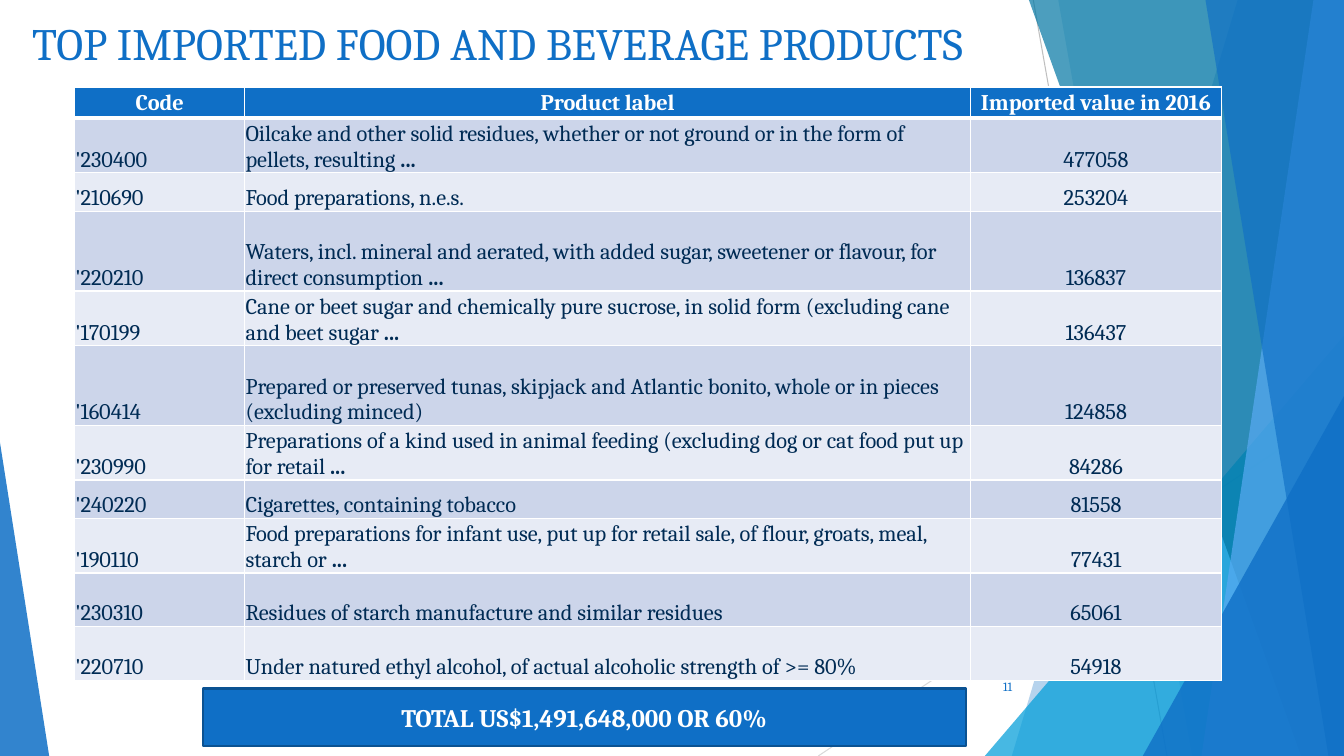
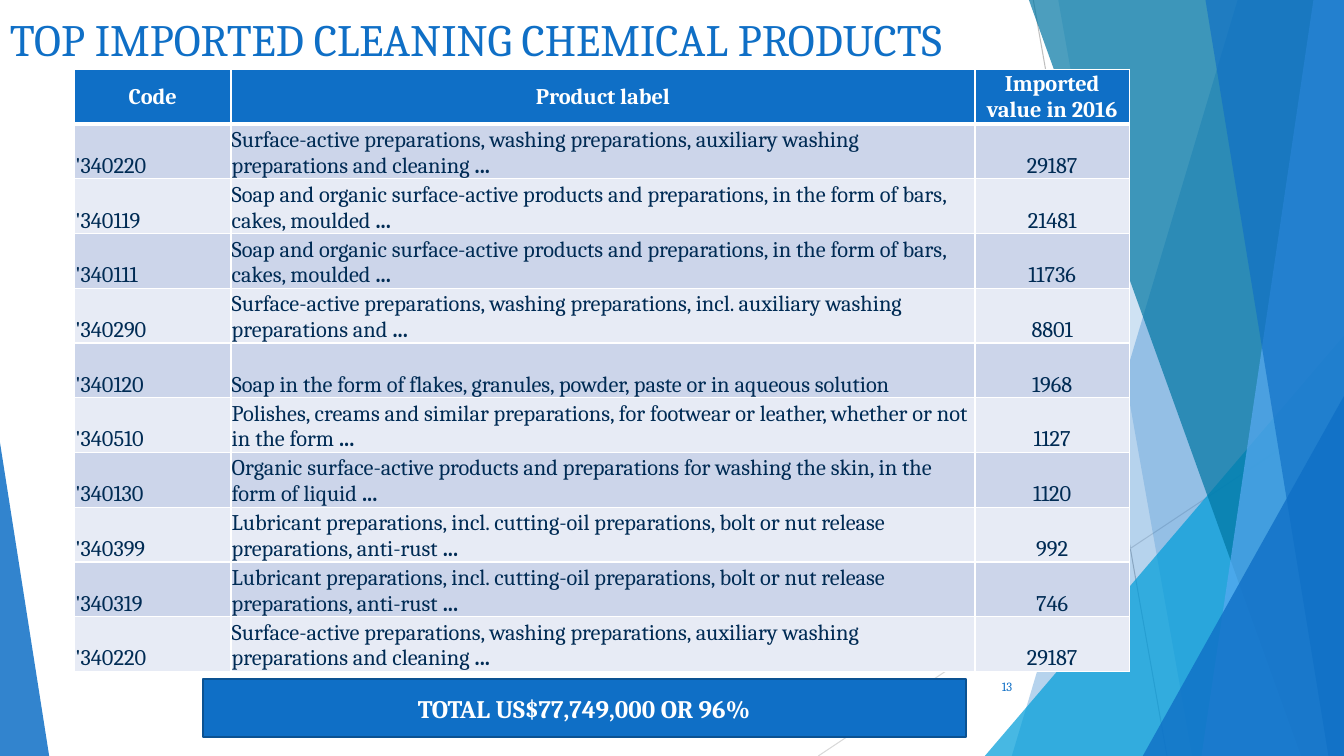
import lxml.etree
import pptx
import pptx.dml.color
import pptx.enum.shapes
import pptx.enum.text
import pptx.oxml.ns
import pptx.util

Cm = pptx.util.Cm
Pt = pptx.util.Pt
RGBColor = pptx.dml.color.RGBColor
ALIGN = pptx.enum.text.PP_ALIGN
ANCHOR = pptx.enum.text.MSO_ANCHOR
SHAPE = pptx.enum.shapes.MSO_SHAPE
qn = pptx.oxml.ns.qn

# Colours
WHITE = RGBColor(0xFF, 0xFF, 0xFF)
BLUE = RGBColor(0x0F, 0x6F, 0xC6)
DARK_BLUE = RGBColor(0x0B, 0x52, 0x92)
NAVY = RGBColor(0x00, 0x2B, 0x54)
CYAN = RGBColor(0x00, 0x9D, 0xD9)
TEAL = RGBColor(0x00, 0x76, 0xA3)
SKY = RGBColor(0x59, 0xAA, 0xF2)
GREY = RGBColor(0xBF, 0xBF, 0xBF)
LIGHT_GREY = RGBColor(0xD9, 0xD9, 0xD9)
ROW_FILLS = (RGBColor(0xCC, 0xD5, 0xEA), RGBColor(0xE7, 0xEB, 0xF5))

# Text formats
FONT = "Cambria"
TITLE = {"name": FONT, "size": Pt(32), "bold": False}
HEADER = {"name": FONT, "size": Pt(16), "bold": True}
BODY = {**HEADER, "bold": False}
TOTAL = {"name": FONT, "size": Pt(18), "bold": True}
NUMBER = {"name": FONT, "size": Pt(9), "bold": False}
CELL_FORMAT = {"margin_left": Cm(0.02), "margin_right": Cm(0.02),
               "margin_top": Cm(0.02), "margin_bottom": 0}

# Page and background geometry, in centimetres
WIDTH, HEIGHT = 33.87, 19.05
LINES = (((26.04, 0), (29.41, HEIGHT), GREY),
         ((WIDTH, 10.24), (20.62, HEIGHT), LIGHT_GREY))
# Bands reach the right edge: x at the top, x at the bottom, colour, opacity
BACK_BANDS = ((31.19, 25.5, BLUE, 30), (26.67, 30.05, BLUE, 20))
FRONT_BANDS = ((25.93, 32.79, TEAL, 70), (33.1, 30.28, SKY, 70),
               (30.38, 33.48, BLUE, 65))
# Triangles stand on the bottom edge: left, right, top, apex, colour, opacity
BACK_TRIANGLE = (24.82, WIDTH, 8.46, 1, CYAN, 72)
FRONT_TRIANGLES = ((28.8, WIDTH, 9.98, 1, BLUE, 80),
                   (0, 1.24, 11.15, 0, BLUE, 85))

# Table content
HEADINGS = ("Code", "Product label", "Imported value in 2016")
FOOD_ROWS = (
    ("'230400", "Oilcake and other solid residues, whether or not ground or in "
                "the form of pellets, resulting ...", "477058"),
    ("'210690", "Food preparations, n.e.s.", "253204"),
    ("'220210", "Waters, incl. mineral and aerated, with added sugar, sweetener "
                "or flavour, for direct consumption ...", "136837"),
    ("'170199", "Cane or beet sugar and chemically pure sucrose, in solid form "
                "(excluding cane and beet sugar ...", "136437"),
    ("'160414", "Prepared or preserved tunas, skipjack and Atlantic bonito, "
                "whole or in pieces (excluding minced)", "124858"),
    ("'230990", "Preparations of a kind used in animal feeding (excluding dog or "
                "cat food put up for retail ...", "84286"),
    ("'240220", "Cigarettes, containing tobacco", "81558"),
    ("'190110", "Food preparations for infant use, put up for retail sale, of "
                "flour, groats, meal, starch or ...", "77431"),
    ("'230310", "Residues of starch manufacture and similar residues", "65061"),
    ("'220710", "Under natured ethyl alcohol, of actual alcoholic strength of "
                ">= 80%", "54918"),
)
WASHING = ("Surface-active preparations, washing preparations, auxiliary washing "
           "preparations and cleaning ...")
SOAP = ("Soap and organic surface-active products and preparations, in the form "
        "of bars, cakes, moulded ...")
LUBRICANT = ("Lubricant preparations, incl. cutting-oil preparations, bolt or nut "
             "release preparations, anti-rust ...")
CLEANING_ROWS = (
    ("'340220", WASHING, "29187"),
    ("'340119", SOAP, "21481"),
    ("'340111", SOAP, "11736"),
    ("'340290", "Surface-active preparations, washing preparations, incl. "
                "auxiliary washing preparations and ...", "8801"),
    ("'340120", "Soap in the form of flakes, granules, powder, paste or in "
                "aqueous solution", "1968"),
    ("'340510", "Polishes, creams and similar preparations, for footwear or "
                "leather, whether or not in the form ...", "1127"),
    ("'340130", "Organic surface-active products and preparations for washing "
                "the skin, in the form of liquid ...", "1120"),
    ("'340399", LUBRICANT, "992"),
    ("'340319", LUBRICANT, "746"),
    ("'340220", WASHING, "29187"),
)
SHORT, NORMAL, TALL = 0.97, 1.35, 2.01
FOOD_HEIGHTS = (0.79, NORMAL, SHORT, TALL, NORMAL, TALL, NORMAL, SHORT,
                NORMAL, NORMAL, NORMAL)
CLEANING_HEIGHTS = (1.38,) * 11


class Deck:
    """Holds the style and the slide being built."""

    def __init__(self):
        self.presentation = pptx.Presentation()
        self.presentation.slide_width = Cm(WIDTH)
        self.presentation.slide_height = Cm(HEIGHT)
        self.slide = None

    def new_slide(self):
        layout = self.presentation.slide_layouts[6]
        self.slide = self.presentation.slides.add_slide(layout)
        self.background()

    # Background
    def background(self):
        for start, end, color in LINES:
            self.line(start, end, color)
        for band in BACK_BANDS:
            self.band(*band)
        self.triangle(*BACK_TRIANGLE)
        for band in FRONT_BANDS:
            self.band(*band)
        for triangle in FRONT_TRIANGLES:
            self.triangle(*triangle)

    def line(self, start, end, color):
        ends = [Cm(value) for value in start + end]
        connector = self.slide.shapes.add_connector(
            pptx.enum.shapes.MSO_CONNECTOR.STRAIGHT, *ends)
        connector.line.color.rgb = color
        connector.line.width = Pt(0.75)
        lxml.etree.SubElement(connector.element.spPr, qn("a:effectLst"))

    def band(self, top_x, bottom_x, color, opacity):
        builder = self.slide.shapes.build_freeform(Cm(top_x), 0)
        corners = ((WIDTH, 0), (WIDTH, HEIGHT), (bottom_x, HEIGHT))
        builder.add_line_segments([(Cm(x), Cm(y)) for x, y in corners])
        self.tint(builder.convert_to_shape(), color, opacity)

    def triangle(self, left, right, top, apex, color, opacity):
        shape = self.slide.shapes.add_shape(
            SHAPE.ISOSCELES_TRIANGLE, Cm(left), Cm(top),
            Cm(right - left), Cm(HEIGHT - top))
        shape.adjustments[0] = apex
        self.tint(shape, color, opacity)

    def tint(self, shape, color, opacity):
        shape.shadow.inherit = False
        shape.fill.solid()
        shape.fill.fore_color.rgb = color
        shape.line.fill.background()
        color_element = shape.element.spPr.find(".//" + qn("a:srgbClr"))
        alpha = lxml.etree.SubElement(color_element, qn("a:alpha"))
        alpha.set("val", str(opacity * 1000))

    # Text
    def add_text(self, paragraph, text, text_format, color, align=ALIGN.LEFT):
        paragraph.alignment = align
        run = paragraph.add_run()
        run.text = text
        for name, value in text_format.items():
            setattr(run.font, name, value)
        run.font.color.rgb = color

    def text_box(self, box, text, text_format, align, anchor):
        shape = self.slide.shapes.add_textbox(*[Cm(value) for value in box])
        frame = shape.text_frame
        frame.word_wrap = True
        frame.vertical_anchor = anchor
        self.add_text(frame.paragraphs[0], text, text_format, BLUE, align)

    def title(self, left, top, text):
        self.text_box((left, top, 32.66, 1.91), text, TITLE,
                      ALIGN.LEFT, ANCHOR.TOP)

    def page_number(self, number):
        self.text_box((23.85, 16.79, 1.91, 1.02), str(number), NUMBER,
                      ALIGN.RIGHT, ANCHOR.MIDDLE)

    def total(self, top, text):
        shape = self.slide.shapes.add_shape(
            SHAPE.RECTANGLE, Cm(5.11), Cm(top), Cm(19.23), Cm(1.45))
        shape.shadow.inherit = False
        shape.fill.solid()
        shape.fill.fore_color.rgb = BLUE
        shape.line.color.rgb = DARK_BLUE
        shape.line.width = Pt(1.5)
        shape.text_frame.vertical_anchor = ANCHOR.MIDDLE
        self.add_text(shape.text_frame.paragraphs[0], text, TOTAL, WHITE,
                      ALIGN.CENTER)

    # Table
    def table(self, top, widths, heights, rows):
        frame = self.slide.shapes.add_table(
            len(heights), len(widths), Cm(1.88), Cm(top),
            Cm(sum(widths)), Cm(sum(heights)))
        table = frame.table
        for column, width in zip(table.columns, widths):
            column.width = Cm(width)
        for row, height in zip(table.rows, heights):
            row.height = Cm(height)
        for row_index, texts in enumerate((HEADINGS,) + rows):
            for column_index, text in enumerate(texts):
                cell = table.cell(row_index, column_index)
                self.cell(cell, text, row_index, column_index)

    def cell(self, cell, text, row_index, column_index):
        is_header = row_index == 0
        for name, value in CELL_FORMAT.items():
            setattr(cell, name, value)
        cell.vertical_anchor = ANCHOR.MIDDLE if is_header else ANCHOR.BOTTOM
        self.borders(cell, top=3 if row_index == 1 else 1,
                     bottom=3 if is_header else 1)
        cell.fill.solid()
        cell.fill.fore_color.rgb = (
            BLUE if is_header else ROW_FILLS[(row_index - 1) % 2])
        paragraph = cell.text_frame.paragraphs[0]
        centred = is_header or column_index == 2
        align = ALIGN.CENTER if centred else ALIGN.LEFT
        if is_header:
            self.add_text(paragraph, text, HEADER, WHITE, align)
            return
        label, dots, _ = text.partition("...")
        self.add_text(paragraph, label, BODY, NAVY, align)
        if dots:
            self.add_text(paragraph, dots, HEADER, NAVY, align)

    def borders(self, cell, top, bottom):
        properties = cell._tc.get_or_add_tcPr()
        sides = {"a:lnL": 1, "a:lnR": 1, "a:lnT": top, "a:lnB": bottom}
        for tag, points in sides.items():
            border = lxml.etree.SubElement(properties, qn(tag),
                                           w=str(Pt(points)))
            fill = lxml.etree.SubElement(border, qn("a:solidFill"))
            lxml.etree.SubElement(fill, qn("a:srgbClr"), val=str(WHITE))


def main():
    deck = Deck()

    # Food and beverage
    deck.new_slide()
    deck.title(0.56, 0.28, "TOP IMPORTED FOOD AND BEVERAGE PRODUCTS")
    deck.table(2.19, (4.29, 18.29, 6.32), FOOD_HEIGHTS, FOOD_ROWS)
    deck.total(17.35, "TOTAL US$1,491,648,000 OR 60%")
    deck.page_number(11)

    # Cleaning chemicals
    deck.new_slide()
    deck.title(0, 0.18, "TOP IMPORTED CLEANING CHEMICAL PRODUCTS")
    deck.table(1.75, (3.94, 18.75, 3.89), CLEANING_HEIGHTS, CLEANING_ROWS)
    deck.total(17.12, "TOTAL US$77,749,000 OR 96%")
    deck.page_number(13)

    deck.presentation.save("out.pptx")


if __name__ == "__main__":
    main()
